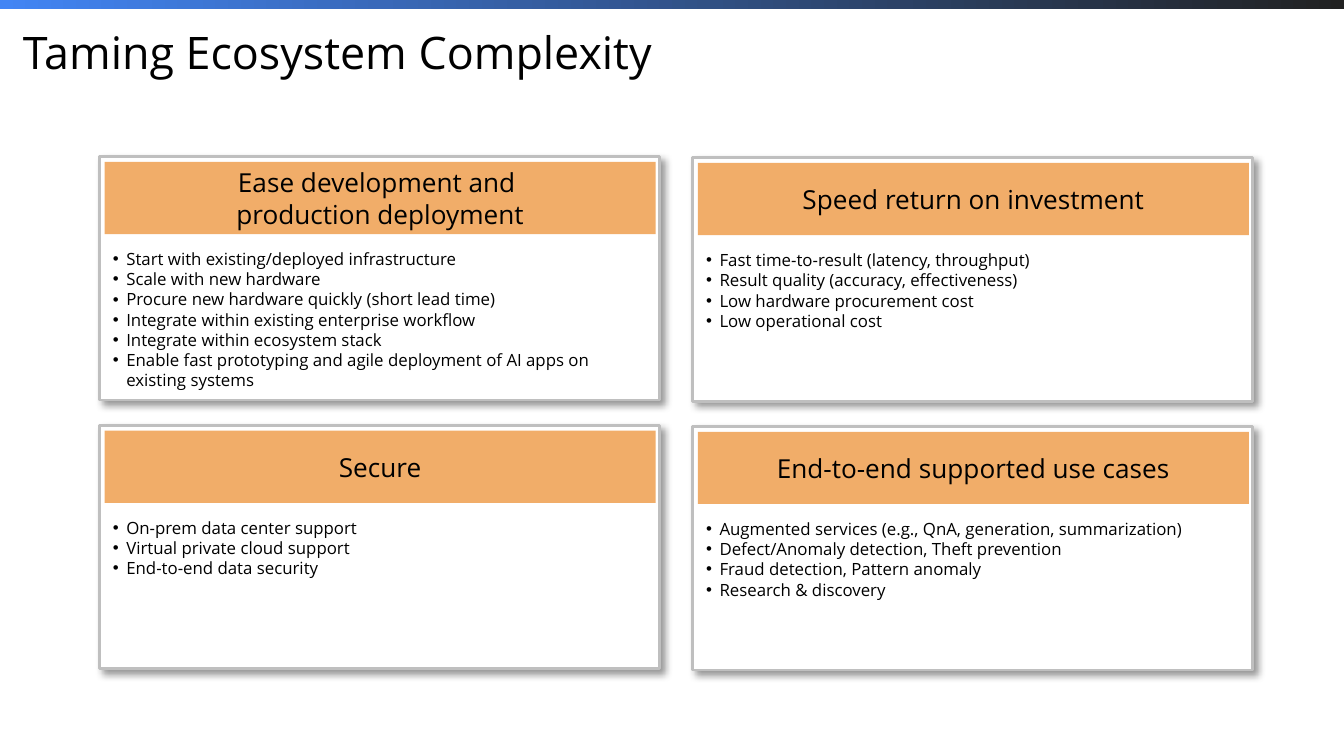
from lxml import etree
from pptx import Presentation
from pptx.dml.color import RGBColor
from pptx.enum import shapes, text
from pptx.oxml import ns
from pptx.util import Pt

CARDS = [
    [
        (["Ease development and ", "production deployment"],
         ["Start with existing/deployed infrastructure",
          "Scale with new hardware",
          "Procure new hardware quickly (short lead time)",
          "Integrate within existing enterprise workflow",
          "Integrate within ecosystem stack",
          "Enable fast prototyping and agile deployment of AI apps on existing systems"]),
        (["Speed return on investment"],
         ["Fast time-to-result (latency, throughput)",
          "Result quality (accuracy, effectiveness)",
          "Low hardware procurement cost",
          "Low operational cost"]),
    ],
    [
        (["Secure"],
         ["On-prem data center support",
          "Virtual private cloud support",
          "End-to-end data security"]),
        (["End-to-end supported use cases"],
         ["Augmented services (e.g., QnA, generation, summarization)",
          "Defect/Anomaly detection, Theft prevention",
          "Fraud detection, Pattern anomaly",
          "Research & discovery"]),
    ],
]


def color(value):
    return RGBColor.from_string(value)


def child(parent, tag, **attributes):
    """Append a DrawingML element and return it."""
    element = etree.SubElement(parent, ns.qn("a:" + tag))
    for name, value in attributes.items():
        element.set(name, str(value))
    return element


def write(frame, lines, size, ink="000000", font="Open Sans", align=None,
          anchor=text.MSO_ANCHOR.TOP, margins=(7.2, 3.6), bullet=None):
    frame.word_wrap = True
    frame.vertical_anchor = anchor
    frame.margin_left = frame.margin_right = Pt(margins[0])
    frame.margin_top = frame.margin_bottom = Pt(margins[1])
    for index, line in enumerate(lines):
        paragraph = frame.add_paragraph() if index else frame.paragraphs[0]
        if bullet:
            properties = paragraph._p.get_or_add_pPr()
            properties.set("marL", str(Pt(7.2)))
            properties.set("indent", str(-Pt(7.2)))
            child(child(properties, "buClr"), "srgbClr", val=ink)
            child(properties, "buFont", typeface="Arial")
            child(properties, "buChar", char=bullet)
        if align is not None:
            paragraph.alignment = align
        run = paragraph.add_run()
        run.text = line
        run.font.size = Pt(size)
        run.font.name = font
        run.font.color.rgb = color(ink)


class Deck:
    accent = "F1AD69"
    border = "BFBFBF"
    paper = "FFFFFF"

    def __init__(self, slide):
        self.slide = slide

    def rectangle(self, left, top, width, height, fill):
        box = self.slide.shapes.add_shape(
            shapes.MSO_SHAPE.RECTANGLE, Pt(left), Pt(top), Pt(width), Pt(height))
        box.shadow.inherit = False
        box.fill.solid()
        box.fill.fore_color.rgb = color(fill)
        box.line.fill.background()
        return box

    def text_box(self, left, top, width, height, lines, **style):
        box = self.slide.shapes.add_textbox(Pt(left), Pt(top), Pt(width), Pt(height))
        write(box.text_frame, lines, **style)

    def top_band(self, start, end):
        band = self.rectangle(0, 0, 720, 5, start)
        band.fill.gradient()
        band.fill.gradient_angle = 0
        for stop, value, position in zip(band.fill.gradient_stops, (start, end), (0, 1)):
            stop.color.rgb = color(value)
            stop.position = position

    def panel(self, left, top, width, height):
        """White bordered rectangle with a soft shadow to the lower right."""
        panel = self.rectangle(left, top, width, height, self.paper)
        panel.line.color.rgb = color(self.border)
        panel.line.width = Pt(1.5)
        effects = panel._element.spPr.find(ns.qn("a:effectLst"))
        shadow = child(effects, "outerShdw", blurRad=Pt(4), dist=Pt(3),
                       dir=45 * 60000, algn="tl", rotWithShape=0)
        child(child(shadow, "srgbClr", val="000000"), "alpha", val=40000)

    def card(self, left, top, heading, points):
        self.panel(left, top, 300, 130.4)
        header = self.rectangle(left + 2.7, top + 2.7, 295.2, 38.7, self.accent)
        write(header.text_frame, heading, size=14, align=text.PP_ALIGN.CENTER,
              anchor=text.MSO_ANCHOR.MIDDLE)
        self.text_box(left, top + 45.7, 296, 7.2 + 11 * len(points), points,
                      size=9, bullet="•")


def main():
    presentation = Presentation()
    presentation.slide_width, presentation.slide_height = Pt(720), Pt(405)
    deck = Deck(presentation.slides.add_slide(presentation.slide_layouts[6]))
    deck.top_band("4285F4", "212121")
    deck.text_box(12.3, 13, 696, 59, ["Taming Ecosystem Complexity"],
                  size=24, margins=(0, 0))
    for row, cards in enumerate(CARDS):
        for column, (heading, points) in enumerate(cards):
            deck.card(53.4 + 317.8 * column, 84 + 144 * row + 0.6 * column,
                      heading, points)
    presentation.save("out.pptx")


if __name__ == "__main__":
    main()
